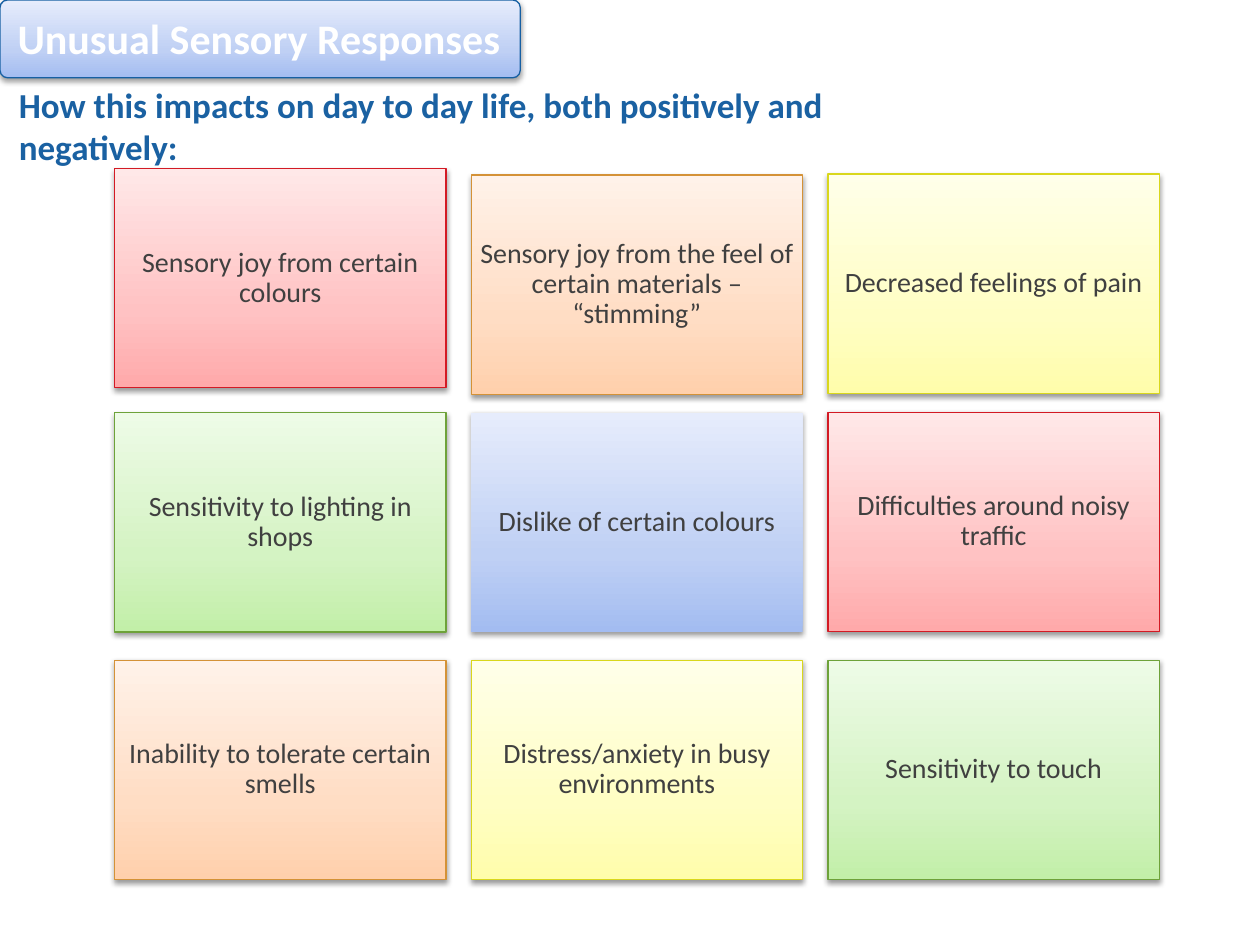
from lxml import etree
from pptx import Presentation
from pptx.dml.color import RGBColor
from pptx.enum.shapes import MSO_SHAPE
from pptx.enum.text import MSO_ANCHOR, MSO_AUTO_SIZE, PP_ALIGN
from pptx.oxml.ns import qn
from pptx.util import Cm, Pt

RECT, ROUNDED = MSO_SHAPE.RECTANGLE, MSO_SHAPE.ROUNDED_RECTANGLE
TOP, MIDDLE = MSO_ANCHOR.TOP, MSO_ANCHOR.MIDDLE
LEFT, CENTER = PP_ALIGN.LEFT, PP_ALIGN.CENTER
NO_FIT, GROW = MSO_AUTO_SIZE.NONE, MSO_AUTO_SIZE.SHAPE_TO_FIT_TEXT

TITLE = "Unusual Sensory Responses"
SUBTITLE = "How this impacts on day to day life, both positively and negatively:"
CARDS = [
    [("Sensory joy from certain colours", "red"),
     ("Sensory joy from the feel of certain materials – “stimming”", "orange"),
     ("Decreased feelings of pain", "yellow")],
    [("Sensitivity to lighting in shops", "green"),
     ("Dislike of certain colours", "blue"),
     ("Difficulties around noisy traffic", "red")],
    [("Inability to tolerate certain smells", "orange"),
     ("Distress/anxiety in busy environments", "yellow"),
     ("Sensitivity to touch", "green")],
]

COLORS = {"title": "FFFFFF", "subtitle": "1A61A2", "card": "404040",
          "banner": "165FA2", "shadow": "000000",
          "red": "D31A24", "orange": "D49237", "yellow": "D9D71C", "green": "6EA23A"}
GRADIENTS = {
    "red": ("FFA9AA", "FFC2C3", "FFE8E8"),
    "orange": ("FFD0AC", "FFDDC4", "FFF2E9"),
    "yellow": ("FFFDAB", "FFFEC4", "FFFFE9"),
    "green": ("C2EFA8", "D4F3C3", "EEFBE7"),
    "blue": ("A3BCF1", "BFD0F4", "E6ECFC"),
}
STOPS = (0, 35, 100)

CARD_W, CARD_H = 6.68, 4.42
GRID_LEFT, COL_STEP = 2.31, 7.19
ROW_TOPS = [(3.4, 3.53, 3.51), (8.32, 8.32, 8.31), (13.31, 13.31, 13.31)]


def add_color(parent, color):
    return etree.SubElement(parent, qn("a:srgbClr"), val=color)


def add_panel(s, kind, box, gradient, line):
    sp = s.shapes.add_shape(kind, *map(Cm, box))
    sp.fill.gradient()
    sp.fill.gradient_angle = 90
    stops = sp._element.spPr.find(".//" + qn("a:gsLst"))
    for stop in list(stops):
        stops.remove(stop)
    for pos, color in zip(STOPS, GRADIENTS[gradient]):
        add_color(etree.SubElement(stops, qn("a:gs"), pos=str(pos * 1000)), color)
    if line:
        sp.line.color.rgb = RGBColor.from_string(line)
        sp.line.width = Pt(0.75)
    else:
        sp.line.fill.background()
    sp.shadow.inherit = False
    effects = sp._element.spPr.find(qn("a:effectLst"))
    shadow = etree.SubElement(effects, qn("a:outerShdw"), blurRad="40000",
                              dist="20000", dir="5400000", rotWithShape="0")
    etree.SubElement(add_color(shadow, COLORS["shadow"]), qn("a:alpha"), val="38000")
    return sp


def set_text(sp, text, size, color, bold=False, align=LEFT, anchor=TOP, fit=NO_FIT):
    tf = sp.text_frame
    tf.word_wrap = True
    tf.auto_size = fit
    tf.vertical_anchor = anchor
    p = tf.paragraphs[0]
    p.text = text
    p.alignment = align
    p.font.name = "Calibri"
    p.font.size = Pt(size)
    p.font.bold = bold
    p.font.color.rgb = RGBColor.from_string(COLORS[color])
    return tf


def add_card(s, box, text, tone):
    sp = add_panel(s, RECT, box, tone, COLORS.get(tone))
    tf = set_text(sp, text, 16, "card", align=CENTER, anchor=MIDDLE)
    tf.margin_left = tf.margin_right = tf.margin_top = tf.margin_bottom = Cm(0.15)
    tf.paragraphs[0].line_spacing = 0.9
    tf.paragraphs[0].space_after = Pt(5.6)


def main():
    prs = Presentation()
    prs.slide_width, prs.slide_height = Cm(25.4), Cm(19.05)
    s = prs.slides.add_slide(prs.slide_layouts[5])

    subtitle = s.shapes.add_textbox(Cm(0.13), Cm(1.55), Cm(17.98), Cm(1.96))
    set_text(subtitle, SUBTITLE, 20, "subtitle", bold=True, fit=GROW)

    for cards, tops in zip(CARDS, ROW_TOPS):
        for col, ((text, tone), top) in enumerate(zip(cards, tops)):
            add_card(s, (GRID_LEFT + col * COL_STEP, top, CARD_W, CARD_H), text, tone)

    banner = add_panel(s, ROUNDED, (0, 0, 10.49, 1.57), "blue", COLORS["banner"])
    banner.adjustments[0] = 0.1

    title = s.shapes.title
    title.left, title.top, title.width, title.height = map(Cm, (0.1, 0.13, 15.37, 2.21))
    set_text(title, TITLE, 24, "title", bold=True)
    s.shapes._spTree.append(title._element)

    prs.save("out.pptx")


if __name__ == "__main__":
    main()
